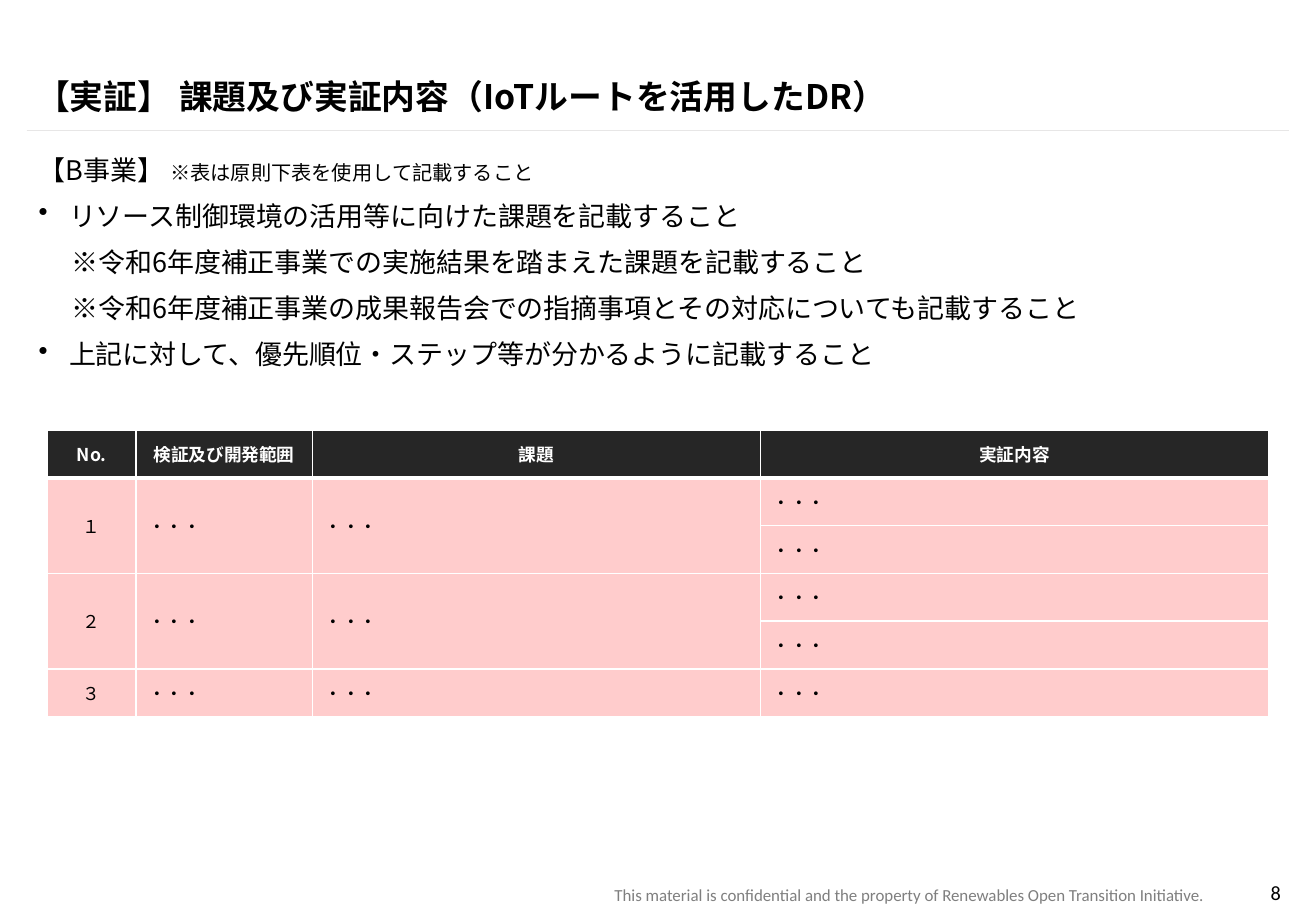
import pptx
import pptx.dml.color
import pptx.enum.shapes
import pptx.enum.text
import pptx.oxml.ns
import pptx.util
from lxml import etree
from pptx.util import Inches

RGBColor = pptx.dml.color.RGBColor
ALIGN = pptx.enum.text.PP_ALIGN
ANCHOR = pptx.enum.text.MSO_ANCHOR
qn = pptx.oxml.ns.qn

BLACK = RGBColor(0x00, 0x00, 0x00)
WHITE = RGBColor(0xFF, 0xFF, 0xFF)
GRAY = RGBColor(0x7F, 0x7F, 0x7F)
RULE = RGBColor(0xE7, 0xE6, 0xE6)
HEADER = RGBColor(0x26, 0x26, 0x26)
PINK = RGBColor(0xFF, 0xCC, 0xCC)
JAPANESE = "Noto Sans CJK JP"
LATIN = "Calibri"

TITLE = "【実証】 課題及び実証内容（IoTルートを活用したDR）"
LEAD = "【B事業】 "
LEAD_NOTE = "※表は原則下表を使用して記載すること"
POINTS = [
    ("リソース制御環境の活用等に向けた課題を記載すること", True),
    ("※令和6年度補正事業での実施結果を踏まえた課題を記載すること", False),
    ("※令和6年度補正事業の成果報告会での指摘事項とその対応についても記載すること", False),
    ("上記に対して、優先順位・ステップ等が分かるように記載すること", True),
]
NOTICE = "This material is confidential and the property of Renewables Open Transition Initiative."
PAGE = "8"
HEADINGS = ["No.", "検証及び開発範囲", "課題", "実証内容"]
ISSUES = [("１", 2), ("２", 2), ("３", 1)]
DOTS = "・・・"
COLUMNS = [0.73, 1.45, 3.69, 4.18]


def add_run(p, text, size=16, font=JAPANESE, color=BLACK, bold=False):
    """Append a formatted run to a paragraph."""
    r = p.add_run()
    r.text = text
    r.font.size = pptx.util.Pt(size)
    r.font.name = font
    r.font.bold = bold
    r.font.color.rgb = color
    ea = etree.SubElement(r._r.get_or_add_rPr(), qn("a:ea"))
    ea.set("typeface", font)


def add_frame(s, x, y, w, h, anchor=ANCHOR.TOP):
    """Add a wrapping text box and return its text frame."""
    tf = s.shapes.add_textbox(Inches(x), Inches(y), Inches(w), Inches(h)).text_frame
    tf.word_wrap = True
    tf.vertical_anchor = anchor
    return tf


def indent(p, left, bullet):
    """Indent a paragraph, hanging a bullet in the margin if asked."""
    pPr = p._p.get_or_add_pPr()
    pPr.set("marL", str(Inches(left)))
    pPr.set("indent", str(-Inches(left) if bullet else 0))
    if bullet:
        etree.SubElement(pPr, qn("a:buChar")).set("char", "•")


def add_title(s, x, y, w, h):
    """Place the title and the thin rule below it."""
    tf = add_frame(s, x, y, w, h, ANCHOR.BOTTOM)
    tf.margin_bottom = Inches(0.02)
    p = tf.paragraphs[0]
    p.line_spacing = pptx.util.Pt(20)
    add_run(p, TITLE, size=20, bold=True)
    rule_y = Inches(y + h + 0.09)
    rule = s.shapes.add_connector(pptx.enum.shapes.MSO_CONNECTOR.STRAIGHT,
                                  Inches(x + 0.02), rule_y, Inches(x + w + 0.01), rule_y)
    rule.line.color.rgb = RULE
    rule.line.width = pptx.util.Pt(0.25)
    etree.SubElement(rule._element.spPr, qn("a:effectLst"))


def add_body(s, x, y, w, h):
    """Place the lead line and the points under it."""
    tf = add_frame(s, x, y, w, h)
    p = tf.paragraphs[0]
    p.line_spacing = pptx.util.Pt(18)
    add_run(p, LEAD)
    add_run(p, LEAD_NOTE, size=12)
    for text, bullet in POINTS:
        p = tf.add_paragraph()
        indent(p, 0.25 if bullet else 0.27, bullet)
        p.line_spacing = pptx.util.Pt(18)
        p.space_before = pptx.util.Pt(9.3)
        add_run(p, text)


def add_borders(cell, top, bottom):
    """Draw white borders round a cell."""
    tcPr = cell._tc.get_or_add_tcPr()
    for side, width in (("L", 1), ("R", 1), ("T", top), ("B", bottom)):
        ln = etree.SubElement(tcPr, qn("a:ln" + side))
        ln.set("w", str(pptx.util.Pt(width)))
        fill = etree.SubElement(ln, qn("a:solidFill"))
        etree.SubElement(fill, qn("a:srgbClr")).set("val", str(WHITE))


def fill_cell(cell, text, align, **style):
    """Write a vertically centred text into a cell."""
    cell.vertical_anchor = ANCHOR.MIDDLE
    p = cell.text_frame.paragraphs[0]
    p.alignment = align
    add_run(p, text, size=10.5, **style)


def add_issue_table(s, x, y, w, h):
    """Place the table of issues and what is to be demonstrated."""
    count = 1 + sum(span for _, span in ISSUES)
    table = s.shapes.add_table(count, len(COLUMNS), Inches(x), Inches(y),
                               Inches(w), Inches(h)).table
    for column, width in zip(table.columns, COLUMNS):
        column.width = Inches(width)
    for i in range(count):
        for j in range(len(COLUMNS)):
            cell = table.cell(i, j)
            add_borders(cell, 3 if i == 1 else 1, 3 if i == 0 else 1)
            cell.fill.solid()
            cell.fill.fore_color.rgb = PINK if i else HEADER
    for j, heading in enumerate(HEADINGS):
        fill_cell(table.cell(0, j), heading, ALIGN.CENTER, color=WHITE, bold=True)
    row = 1
    for number, span in ISSUES:
        for j, text in enumerate([number, DOTS, DOTS]):
            cell = table.cell(row, j)
            if span > 1:
                cell.merge(table.cell(row + span - 1, j))
            fill_cell(cell, text, ALIGN.LEFT if j else ALIGN.CENTER)
        for i in range(row, row + span):
            fill_cell(table.cell(i, 3), DOTS, ALIGN.LEFT)
        row += span


def add_footer(s, x, y, w, h):
    """Place the confidentiality notice and the page number."""
    notice = add_frame(s, x, y + 0.03, 6.28, h - 0.03)
    page = add_frame(s, x + w - 0.79, y, 0.79, h)
    page.margin_left = page.margin_right = 0
    for tf, text, size, color in ((notice, NOTICE, 10, GRAY), (page, PAGE, 12, BLACK)):
        p = tf.paragraphs[0]
        p.alignment = ALIGN.RIGHT
        add_run(p, text, size=size, font=LATIN, color=color)


def main():
    """Build the slide and save it."""
    prs = pptx.Presentation()
    prs.slide_width = Inches(10.83)
    prs.slide_height = Inches(7.5)
    s = prs.slides.add_slide(prs.slide_layouts[6])
    add_footer(s, 3.72, 7.2, 6.82, 0.3)
    add_body(s, 0.22, 1.23, 10.4, 5.83)
    add_title(s, 0.2, 0.59, 10.4, 0.39)
    add_issue_table(s, 0.39, 3.54, 10.05, 2.36)
    prs.save("out.pptx")


if __name__ == "__main__":
    main()
